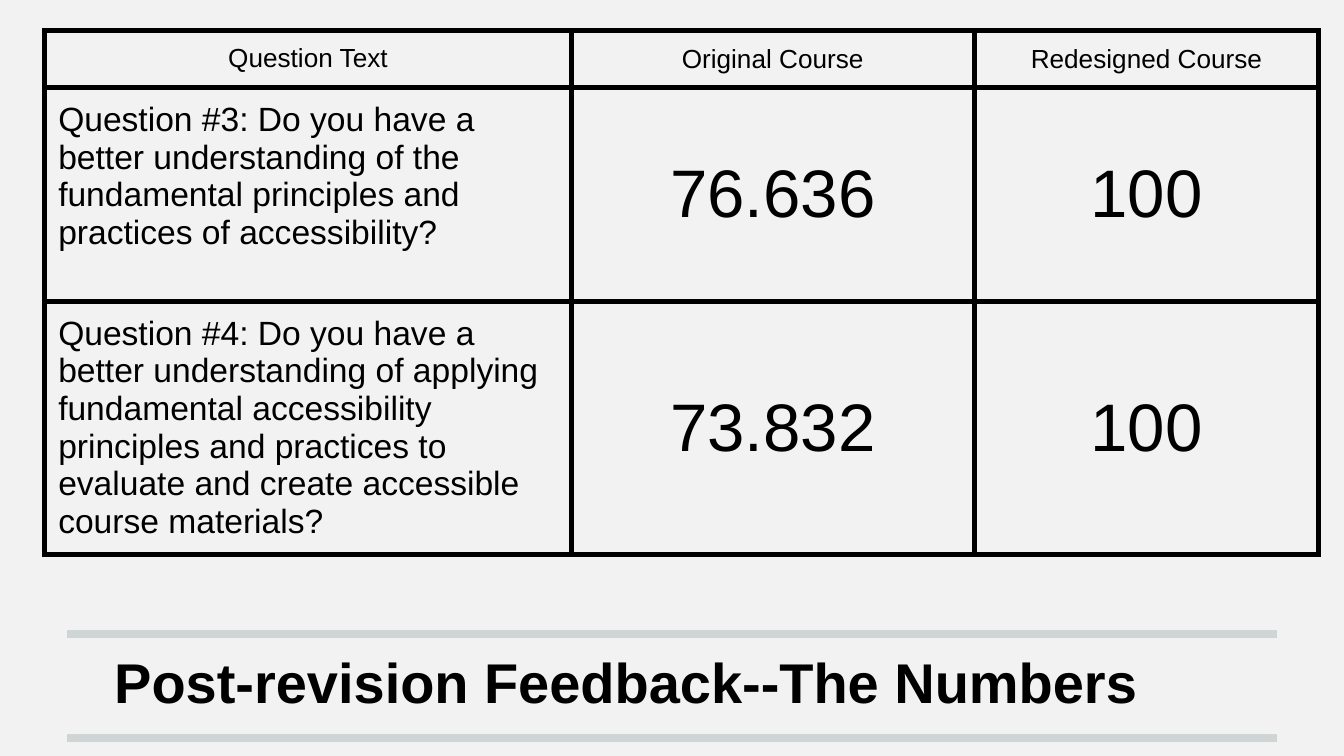
from dataclasses import dataclass

import lxml.etree
import pptx
import pptx.dml.color
import pptx.enum.text
import pptx.oxml.ns
import pptx.util

Pt = pptx.util.Pt
qn = pptx.oxml.ns.qn
ALIGN = pptx.enum.text.PP_ALIGN
ANCHOR = pptx.enum.text.MSO_ANCHOR


@dataclass(frozen=True)
class Theme:
    font: str = "Arial"
    background: str = "F2F2F2"
    text: str = "000000"
    rule: str = "CFD4D4"
    title_size: int = 30
    header_size: int = 14
    question_size: int = 18
    score_size: int = 36
    rule_width: int = 4
    border_width: int = 3
    inset: float = 7.2


THEME = Theme()

COLUMN_WIDTHS = (282, 216, 184.5)
ROW_HEIGHTS = (30.5, 114.5, 135.5)
ROWS = (
    ("Question Text", "Original Course", "Redesigned Course"),
    (
        "Question #3: Do you have a better understanding of the fundamental "
        "principles and practices of accessibility?",
        "76.636",
        "100",
    ),
    (
        "Question #4: Do you have a better understanding of applying fundamental "
        "accessibility principles and practices to evaluate and create accessible "
        "course materials?",
        "73.832",
        "100",
    ),
)


def rgb(value):
    return pptx.dml.color.RGBColor.from_string(value)


def set_insets(target):
    target.margin_left = target.margin_right = Pt(THEME.inset)
    target.margin_top = target.margin_bottom = Pt(THEME.inset)


def format_text(tf, size, align, bold=False):
    for p in tf.paragraphs:
        p.alignment = align
        for r in p.runs:
            r.font.name = THEME.font
            r.font.size = Pt(size)
            r.font.bold = bold
            r.font.color.rgb = rgb(THEME.text)


def add_rule(s, y):
    sp = s.shapes.add_connector(
        pptx.enum.shapes.MSO_CONNECTOR.STRAIGHT, Pt(36), Pt(y), Pt(684), Pt(y)
    )
    sp.line.color.rgb = rgb(THEME.rule)
    sp.line.width = Pt(THEME.rule_width)
    lxml.etree.SubElement(sp._element.spPr, qn("a:effectLst"))


def set_title(s, text):
    sp = s.shapes.title
    sp.left, sp.top, sp.width, sp.height = Pt(54), Pt(322.5), Pt(648), Pt(67.5)
    tf = sp.text_frame
    tf.text = text
    tf.word_wrap = True
    tf.auto_size = pptx.enum.text.MSO_AUTO_SIZE.NONE
    tf.vertical_anchor = ANCHOR.BOTTOM
    set_insets(tf)
    format_text(tf, THEME.title_size, ALIGN.LEFT, bold=True)


def set_borders(cell):
    tc_pr = cell._tc.get_or_add_tcPr()
    for i, side in enumerate(("a:lnL", "a:lnR", "a:lnT", "a:lnB")):
        ln = lxml.etree.Element(qn(side), w=str(Pt(THEME.border_width)))
        fill = lxml.etree.SubElement(ln, qn("a:solidFill"))
        lxml.etree.SubElement(fill, qn("a:srgbClr"), val=THEME.text)
        tc_pr.insert(i, ln)


def fill_cell(cell, text, size, align, anchor):
    cell.text_frame.text = text
    cell.vertical_anchor = anchor
    set_insets(cell)
    cell.fill.background()
    set_borders(cell)
    format_text(cell.text_frame, size, align)


def add_score_table(s):
    sp = s.shapes.add_table(
        len(ROWS), len(COLUMN_WIDTHS), Pt(24), Pt(16.5),
        Pt(sum(COLUMN_WIDTHS)), Pt(sum(ROW_HEIGHTS)),
    )
    table = sp.table
    table.first_row = table.horz_banding = False
    for column, width in zip(table.columns, COLUMN_WIDTHS):
        column.width = Pt(width)
    for row, height in zip(table.rows, ROW_HEIGHTS):
        row.height = Pt(height)
    for i, texts in enumerate(ROWS):
        for j, text in enumerate(texts):
            if i == 0:
                size = THEME.header_size
            else:
                size = THEME.question_size if j == 0 else THEME.score_size
            align = ALIGN.LEFT if i > 0 and j == 0 else ALIGN.CENTER
            anchor = ANCHOR.TOP if j == 0 else ANCHOR.MIDDLE
            fill_cell(table.cell(i, j), text, size, align, anchor)


def main():
    prs = pptx.Presentation()
    prs.slide_width, prs.slide_height = Pt(720), Pt(405)
    s = prs.slides.add_slide(prs.slide_layouts[5])
    s.background.fill.solid()
    s.background.fill.fore_color.rgb = rgb(THEME.background)
    for y in (395.5, 339.75):
        add_rule(s, y)
    set_title(s, "Post-revision Feedback--The Numbers")
    add_score_table(s)
    prs.save("out.pptx")


if __name__ == "__main__":
    main()
